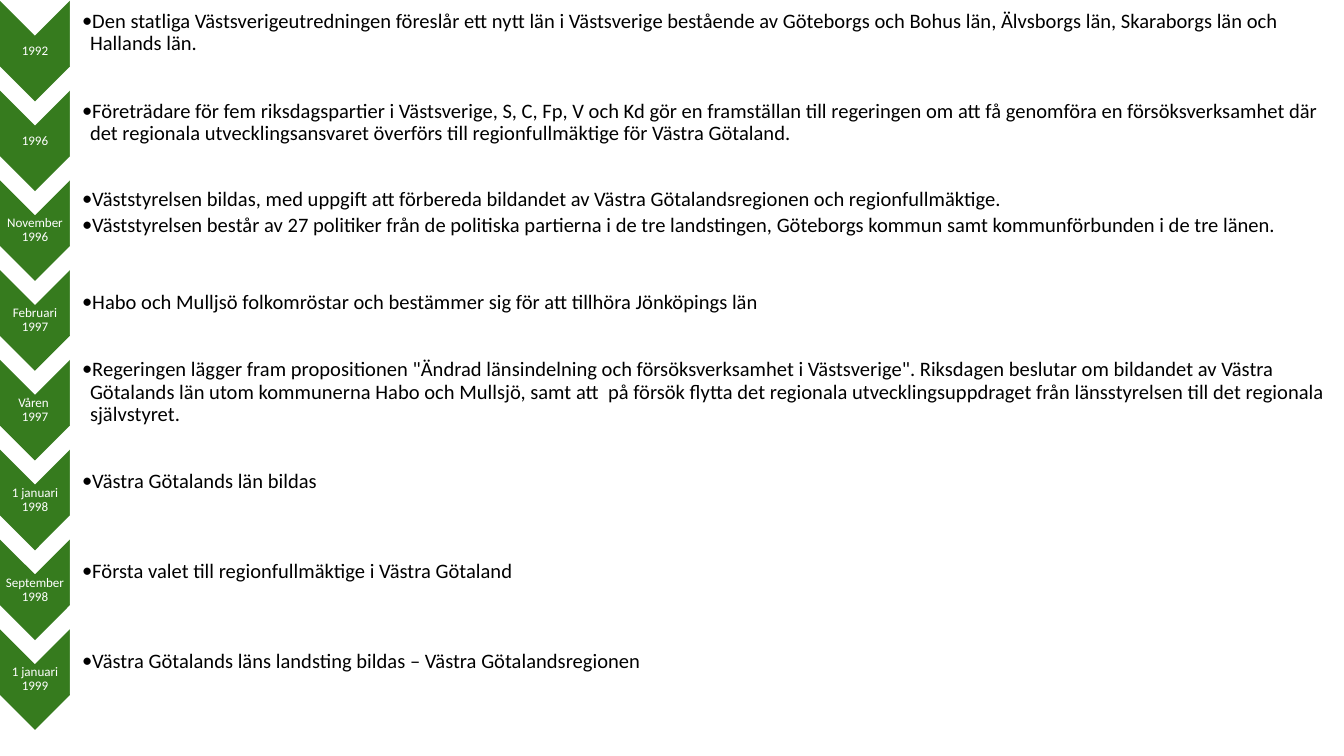
from dataclasses import dataclass

from lxml.etree import SubElement
from pptx import Presentation
from pptx.dml.color import RGBColor
from pptx.enum.shapes import MSO_SHAPE
from pptx.enum.text import MSO_ANCHOR, PP_ALIGN
from pptx.oxml.ns import qn
from pptx.util import Inches, Pt


@dataclass(frozen=True)
class Theme:
    font: str = "Calibri"
    green: RGBColor = RGBColor(0x36, 0x7B, 0x1E)
    white: RGBColor = RGBColor(0xFF, 0xFF, 0xFF)
    black: RGBColor = RGBColor(0x00, 0x00, 0x00)
    label_size: int = 7
    body_size: int = 11
    line_spacing: float = 0.9
    panel_opacity: int = 90


# Grid: one timeline step per row, one inch per column
COLUMNS = 10
ROWS = 8.42
DATE_WIDTH = 0.52

STEPS = [
    ("1992", [
        "Den statliga Västsverigeutredningen föreslår ett nytt län i Västsverige bestående av "
        "Göteborgs och Bohus län, Älvsborgs län, Skaraborgs län och Hallands län."]),
    ("1996", [
        "Företrädare för fem riksdagspartier i Västsverige, S, C, Fp, V och Kd gör en framställan "
        "till regeringen om att få genomföra en försöksverksamhet där det regionala "
        "utvecklingsansvaret överförs till regionfullmäktige för Västra Götaland."]),
    ("November 1996", [
        "Väststyrelsen bildas, med uppgift att förbereda bildandet av Västra Götalandsregionen "
        "och regionfullmäktige.",
        "Väststyrelsen består av 27 politiker från de politiska partierna i de tre landstingen, "
        "Göteborgs kommun samt kommunförbunden i de tre länen."]),
    ("Februari 1997", [
        "Habo och Mulljsö folkomröstar och bestämmer sig för att tillhöra Jönköpings län"]),
    ("Våren \v1997", [
        'Regeringen lägger fram propositionen "Ändrad länsindelning och försöksverksamhet i '
        'Västsverige". Riksdagen beslutar om bildandet av Västra Götalands län utom kommunerna '
        "Habo och Mullsjö, samt att  på försök flytta det regionala utvecklingsuppdraget från "
        "länsstyrelsen till det regionala självstyret."]),
    ("1 januari 1998", ["Västra Götalands län bildas"]),
    ("September 1998", ["Första valet till regionfullmäktige i Västra Götaland"]),
    ("1 januari 1999", ["Västra Götalands läns landsting bildas – Västra Götalandsregionen"]),
]


class TimelineSlide:
    def __init__(self, presentation, theme):
        self.theme = theme
        self.slide = presentation.slides.add_slide(presentation.slide_layouts[6])
        self.column = presentation.slide_width / COLUMNS
        self.row = presentation.slide_height / ROWS

    def box(self, left, middle, width, height):
        """Turn columns and rows, centred on a row position, into slide lengths."""
        return (int(left * self.column), int((middle - height / 2) * self.row),
                int(width * self.column), int(height * self.row))

    def turned_shape(self, kind, box, color):
        """Draw a shape turned a quarter so that it fills the box."""
        left, top, width, height = box
        shape = self.slide.shapes.add_shape(
            kind, left + (width - height) // 2, top + (height - width) // 2, height, width)
        shape.rotation = 90
        shape.shadow.inherit = False
        shape.fill.solid()
        shape.fill.fore_color.rgb = color
        shape.line.fill.background()
        return shape

    def chevron(self, middle):
        self.turned_shape(MSO_SHAPE.CHEVRON, self.box(0, middle, DATE_WIDTH, 1.12),
                          self.theme.green)

    def panel(self, middle):
        box = self.box(DATE_WIDTH, middle, COLUMNS - DATE_WIDTH, 0.73)
        shape = self.turned_shape(MSO_SHAPE.ROUND_2_SAME_RECTANGLE, box, self.theme.white)
        color = shape.fill._xPr.find(qn("a:solidFill"))[0]
        SubElement(color, qn("a:alpha"), val=str(self.theme.panel_opacity * 1000))

    def text_frame(self, box, left_inset, inset):
        frame = self.slide.shapes.add_textbox(*box).text_frame
        frame.word_wrap = True
        frame.vertical_anchor = MSO_ANCHOR.MIDDLE
        frame.margin_left = Inches(left_inset)
        frame.margin_top = frame.margin_right = frame.margin_bottom = Inches(inset)
        return frame

    def style(self, paragraph, size, color, space_after):
        paragraph.line_spacing = self.theme.line_spacing
        paragraph.space_after = Pt(space_after)
        paragraph.font.name = self.theme.font
        paragraph.font.size = Pt(size)
        paragraph.font.color.rgb = color

    def date(self, text, middle):
        frame = self.text_frame(self.box(0, middle, DATE_WIDTH, 0.33), 0, 0)
        paragraph = frame.paragraphs[0]
        paragraph.text = text
        paragraph.alignment = PP_ALIGN.CENTER
        self.style(paragraph, self.theme.label_size, self.theme.white, 3)

    def bullets(self, texts, middle):
        frame = self.text_frame(self.box(DATE_WIDTH, middle, 9.45, 0.66), 0.09, 0.01)
        for index, text in enumerate(texts):
            paragraph = frame.add_paragraph() if index else frame.paragraphs[0]
            paragraph.text = text
            paragraph.level = 1
            properties = paragraph._p.get_or_add_pPr()
            properties.set("marL", str(Inches(0.06)))
            properties.set("indent", str(Inches(-0.06)))
            SubElement(properties, qn("a:buFont"), typeface=self.theme.font)
            SubElement(properties, qn("a:buChar"), char="•")
            self.style(paragraph, self.theme.body_size, self.theme.black, 2)


def main():
    presentation = Presentation()
    presentation.slide_width = Inches(10)
    presentation.slide_height = Inches(45 / 8)
    timeline = TimelineSlide(presentation, Theme())

    # One date chevron and one text panel per step
    for row, (date, texts) in enumerate(STEPS):
        date_middle = row + 0.57
        text_middle = row + 0.37
        timeline.chevron(date_middle)
        timeline.date(date, date_middle)
        timeline.panel(text_middle)
        timeline.bullets(texts, text_middle)

    presentation.save("out.pptx")


if __name__ == "__main__":
    main()
